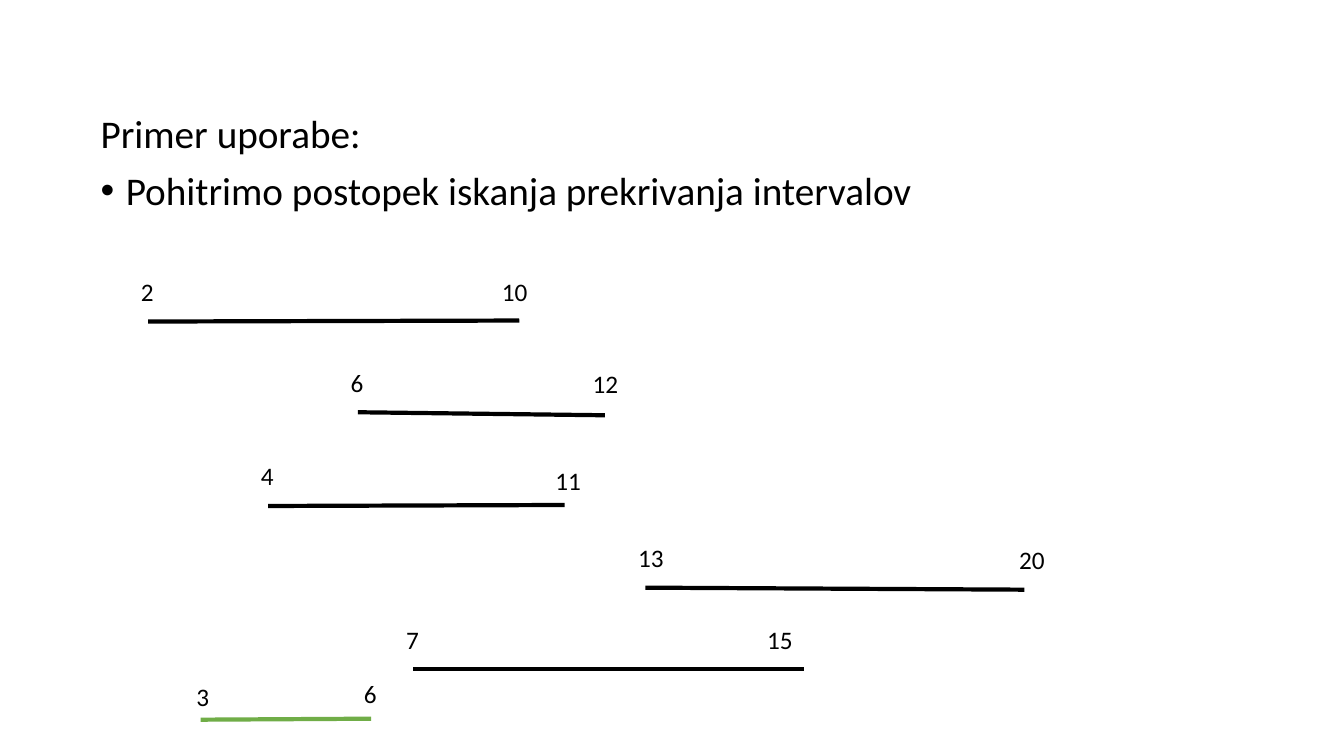
from lxml.etree import SubElement
from pptx import Presentation
from pptx.dml.color import RGBColor
from pptx.enum.shapes import MSO_CONNECTOR
from pptx.oxml.ns import qn
from pptx.util import Inches, Pt

FONT = "Calibri"
BLACK, GREEN = "000000", "70AD47"
CELL = Inches(0.01)  # grid of 1333 columns by 750 rows
START_SIZE, END_SIZE = (55, 42), (59, 40)

# start value, end value, line start, line end, start label, end label, colour
INTERVALS = [
    (2, 10, (147, 319), (515, 318), (130, 269), (488, 269), BLACK),
    (6, 12, (355, 409), (600, 412), (338, 359), (578, 361), BLACK),
    (4, 11, (266, 502), (560, 501), (249, 452), (541, 457), BLACK),
    (13, 20, (640, 583), (1016, 585), (623, 533), (1001, 535), BLACK),
    (7, 15, (410, 664), (797, 664), (393, 614), (751, 614), BLACK),
    (3, 6, (199, 714), (368, 713), (185, 671), (351, 668), GREEN),
]


def color(hex_string):
    return RGBColor.from_string(hex_string)


def grid(*cells):
    return [n * CELL for n in cells]


def add_text(s, at, size, lines, points):
    tf = s.shapes.add_textbox(*grid(*at, *size)).text_frame
    tf.word_wrap = True
    for i, line in enumerate(lines):
        p = tf.paragraphs[0] if i == 0 else tf.add_paragraph()
        r = p.add_run()
        r.text = line
        for name, value in {"name": FONT, "size": Pt(points)}.items():
            setattr(r.font, name, value)
        r.font.color.rgb = color(BLACK)
    return tf


def add_bullet(p):
    pPr = p._p.get_or_add_pPr()
    pPr.set("marL", str(Inches(0.25)))
    pPr.set("indent", str(-Inches(0.25)))
    SubElement(pPr, qn("a:buFont")).set("typeface", "Arial")
    SubElement(pPr, qn("a:buChar")).set("char", "•")


def add_intro(s):
    tf = add_text(s, (90, 109), (1150, 157), [
        "Primer uporabe:",
        "Pohitrimo postopek iskanja prekrivanja intervalov",
    ], 28)
    for p in tf.paragraphs:
        for name, value in {"line_spacing": 0.9, "space_before": Pt(10)}.items():
            setattr(p, name, value)
    add_bullet(tf.paragraphs[1])


def add_line(s, start, end, line_color):
    line = s.shapes.add_connector(MSO_CONNECTOR.STRAIGHT, *grid(*start, *end))
    line.line.color.rgb = color(line_color)
    line.line.width = Pt(3)
    SubElement(line._element.spPr, qn("a:effectLst"))


def add_interval(s, low, high, start, end, low_at, high_at, line_color):
    add_line(s, start, end, line_color)
    add_text(s, low_at, START_SIZE, [str(low)], 18)
    add_text(s, high_at, END_SIZE, [str(high)], 18)


def main():
    prs = Presentation()
    prs.slide_width, prs.slide_height = grid(1333, 750)
    s = prs.slides.add_slide(prs.slide_layouts[6])
    add_intro(s)
    for interval in INTERVALS:
        add_interval(s, *interval)
    prs.save("out.pptx")


if __name__ == "__main__":
    main()
